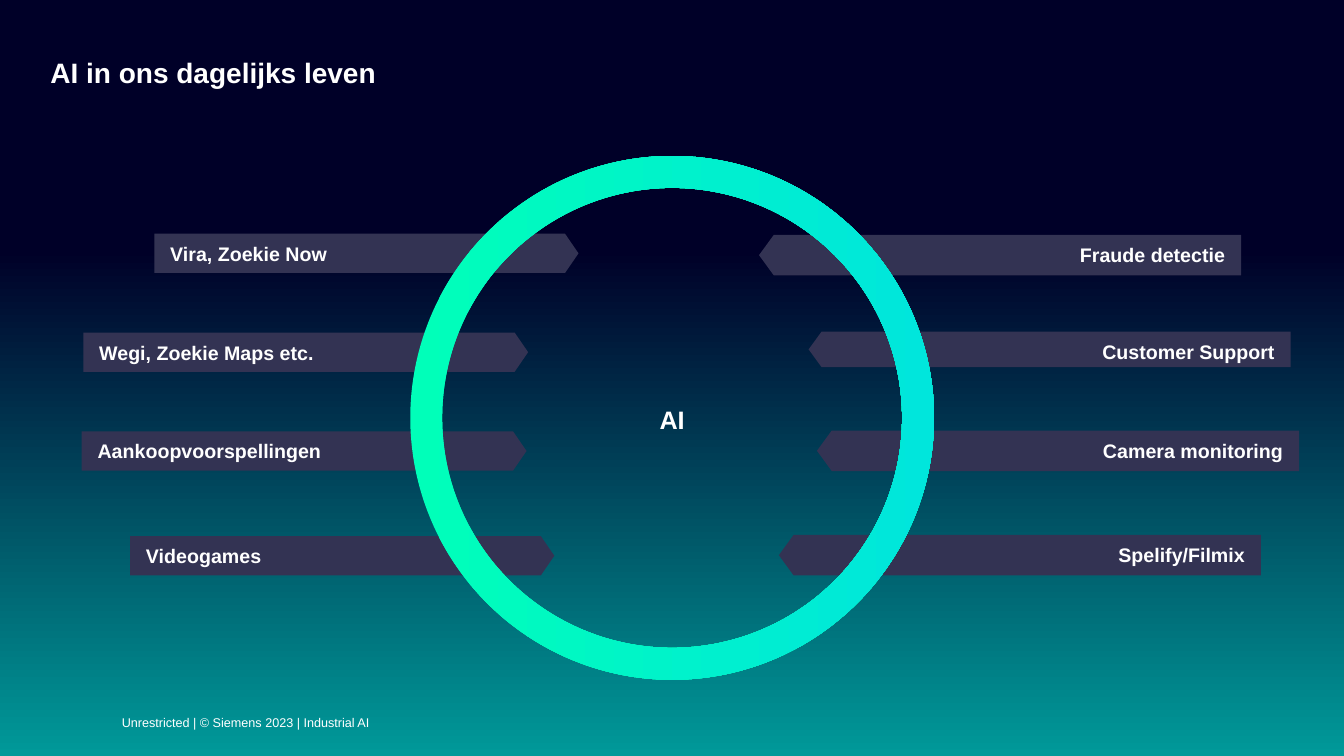
"""Build a slide that shows everyday uses of AI around a ring."""
from pptx import Presentation
from pptx import util as u
from pptx.dml import color
from pptx.enum import shapes, text

COLOURS = {
    "night": "000028",
    "teal": "009999",
    "label": "333353",
    "green": "00FFB9",
    "cyan": "00E6DC",
    "white": "FFFFFF",
}
LEFT_LABELS = [
    ("Vira, Zoekie Now", 3.89, 5.89, 10.69),
    ("Wegi, Zoekie Maps etc.", 2.1, 8.38, 11.21),
    ("Aankoopvoorspellingen", 2.06, 10.87, 11.21),
    ("Videogames", 3.28, 13.51, 10.69),
]
RIGHT_LABELS = [
    ("Fraude detectie", 19.13, 5.92, 1.02),
    ("Customer Support", 20.38, 8.36, 0.89),
    ("Camera monitoring", 20.59, 10.85, 1.02),
    ("Spelify/Filmix", 19.63, 13.48, 1.02),
]
RIGHT_WIDTH = 12.15


def rgb(name):
    """Return the named colour."""
    return color.RGBColor.from_string(COLOURS[name])


def apply(target, formats):
    """Set each attribute in formats on the target."""
    for name, value in formats.items():
        setattr(target, name, value)


def fill_gradient(fill, angle, stops):
    """Fill with a linear gradient between two (position, colour) stops."""
    fill.gradient()
    fill.gradient_angle = angle
    for stop, (position, name) in zip(fill.gradient_stops, stops):
        stop.position = position
        stop.color.rgb = rgb(name)


def write(shape, wording, size, insets, bold=True, anchor="TOP", align="LEFT", spacing=1.0):
    """Write one formatted paragraph in a shape."""
    frame = shape.text_frame
    sides = ("margin_left", "margin_top", "margin_right", "margin_bottom")
    apply(frame, {side: u.Cm(inset) for side, inset in zip(sides, insets)})
    apply(frame, {"word_wrap": True, "vertical_anchor": text.MSO_ANCHOR[anchor]})
    paragraph = frame.paragraphs[0]
    apply(paragraph, {"alignment": text.PP_ALIGN[align], "line_spacing": spacing})
    run = paragraph.add_run()
    run.text = wording
    apply(run.font, {"name": "Arial", "size": u.Pt(size), "bold": bold})
    run.font.color.rgb = rgb("white")


def add_text(slide, wording, box, size, insets, **formats):
    """Add a text box."""
    shape = slide.shapes.add_textbox(*map(u.Cm, box))
    write(shape, wording, size, insets, **formats)


def add_plain_shape(slide, kind, box, adjustment):
    """Add a preset shape without line or shadow."""
    shape = slide.shapes.add_shape(kind, *map(u.Cm, box))
    shape.adjustments[0] = adjustment
    shape.shadow.inherit = False
    shape.line.fill.background()
    return shape


def add_label(slide, wording, box, adjustment, points_left=False):
    """Add an arrow label that points towards the ring."""
    shape = add_plain_shape(slide, shapes.MSO_SHAPE.PENTAGON, box, adjustment)
    shape.fill.solid()
    shape.fill.fore_color.rgb = rgb("label")
    if points_left:
        shape._element.spPr.xfrm.set("flipH", "1")
        write(shape, wording, 14, (4.5, 0.2, 0.4, 0.2), align="RIGHT")
    else:
        write(shape, wording, 14, (0.4, 0.2, 4.5, 0.2))


def add_ring(slide, wording):
    """Add the gradient ring with its centred word."""
    shape = add_plain_shape(slide, shapes.MSO_SHAPE.DONUT, (10.34, 3.93, 13.2, 13.2), 0.061)
    fill_gradient(shape.fill, 0, [(0, "green"), (1, "cyan")])
    write(shape, wording, 18, (1.9, 0.4, 1.9, 0.4), anchor="MIDDLE", align="CENTER", spacing=1.1)


def main():
    """Build and save the slide."""
    presentation = Presentation()
    apply(presentation, {"slide_width": u.Cm(33.87), "slide_height": u.Cm(19.05)})
    slide = presentation.slides.add_slide(presentation.slide_layouts[6])
    fill_gradient(slide.background.fill, 270, [(0.33, "night"), (1, "teal")])

    add_text(slide, "AI in ons dagelijks leven", (1.27, 1.52, 27.4, 1.6), 20,
             (0, 0, 0.9, 0.94), anchor="BOTTOM", spacing=0.9)
    for wording, left, top, width in LEFT_LABELS:
        add_label(slide, wording, (left, top, width, 0.99), 0.343)
    for wording, left, top, height in RIGHT_LABELS:
        add_label(slide, wording, (left, top, RIGHT_WIDTH, height), 0.364, points_left=True)
    add_ring(slide, "AI")
    add_text(slide, "Unrestricted | © Siemens 2023 | Industrial AI", (3.07, 17.53, 25.6, 1.52), 9,
             (0, 0, 0, 0.18), bold=False, anchor="MIDDLE")

    presentation.save("out.pptx")


if __name__ == "__main__":
    main()
